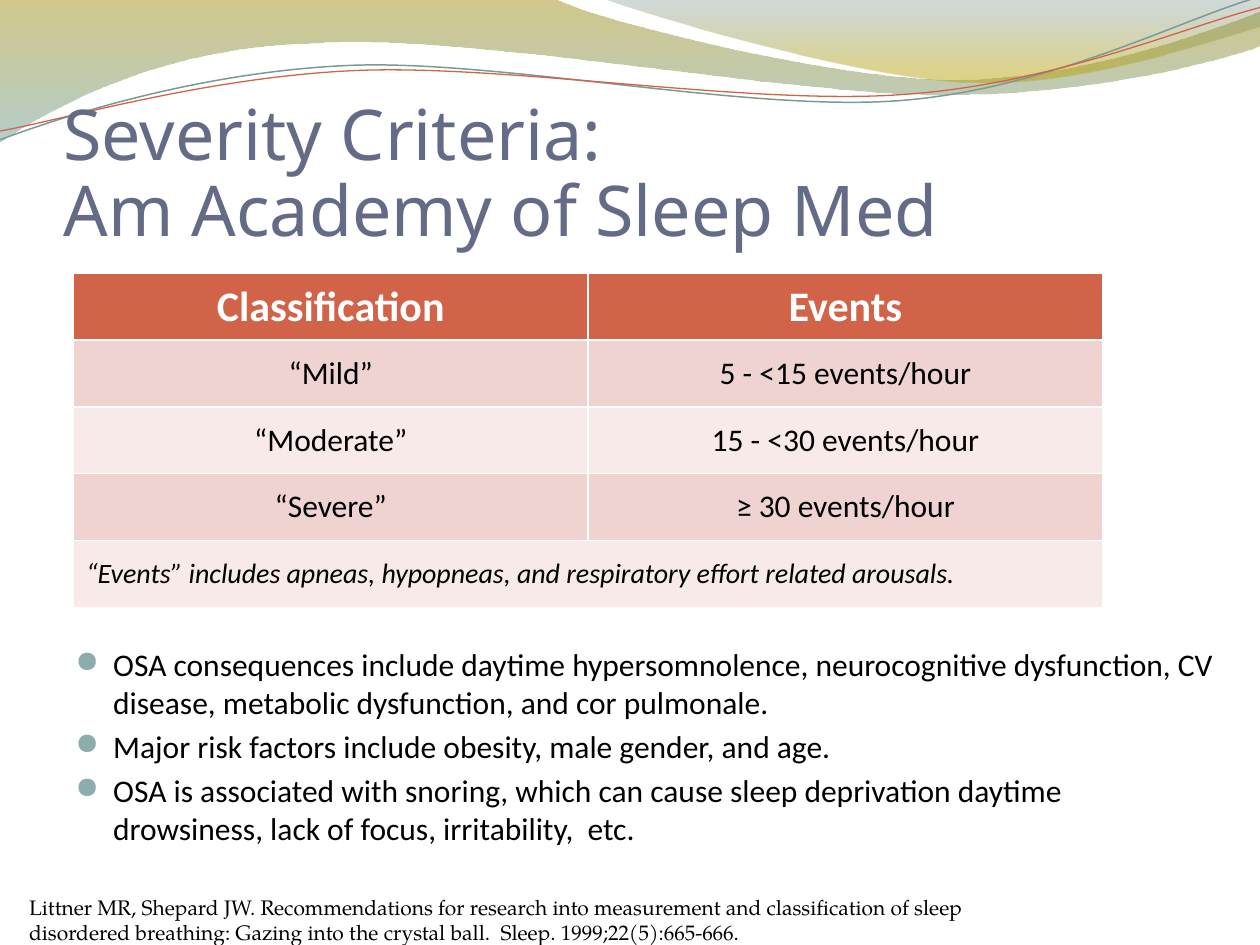
"""Build a slide of sleep apnea severity criteria."""
import dataclasses
import itertools

import lxml.etree
import pptx
import pptx.dml.color
import pptx.enum.text
import pptx.oxml.ns
import pptx.util

Align = pptx.enum.text.PP_ALIGN
Anchor = pptx.enum.text.MSO_ANCHOR
COLUMNS, ROWS = 100, 75
UNIT = pptx.util.Inches(10) // COLUMNS


@dataclasses.dataclass(frozen=True)
class Theme:
    """Colours, fonts and type sizes of the slide."""

    title: str = "646B86"
    ink: str = "000000"
    paper: str = "FFFFFF"
    accent: str = "D16349"
    bands: tuple = ("EED3D0", "F7EAE9")
    bullet: str = "8CADAE"
    thread: str = "7C999A"
    wide_wave: tuple = ((0, "978500", 45), (1, "77A5A6", 55))
    short_wave: tuple = ((0, "648484", 30), (0.8, "B49F00", 45))
    title_font: str = "Noto Sans"
    body_font: str = "Calibri"
    citation_font: str = "TeX Gyre Pagella"
    bullet_font: str = "OpenSymbol"
    title_size: int = 40
    header_size: int = 24
    body_size: int = 18
    note_size: int = 16
    citation_size: int = 12


@dataclasses.dataclass(frozen=True)
class Box:
    """A region in grid columns and rows."""

    left: float
    top: float
    width: float
    height: float

    def lengths(self):
        """Return left, top, width and height as slide lengths."""
        return [round(value * UNIT) for value in dataclasses.astuple(self)]


THEME = Theme()


def rgb(value):
    """Turn a hex string into a colour."""
    return pptx.dml.color.RGBColor.from_string(value)


def add_element(parent, tag, **attributes):
    """Append a drawing element and return it."""
    element = lxml.etree.SubElement(parent, pptx.oxml.ns.qn(tag))
    for name, value in attributes.items():
        element.set(name, str(value))
    return element


def write_text(frame, text, size=THEME.body_size, font=THEME.body_font, color=THEME.ink,
               bold=False, italic=False, align=Align.LEFT, spacing=None, before=0):
    """Write one formatted paragraph at the end of a text frame."""
    paragraph = frame.paragraphs[-1]
    if paragraph.runs:
        paragraph = frame.add_paragraph()
    paragraph.text = text
    paragraph.alignment = align
    paragraph.line_spacing = spacing
    paragraph.space_before = pptx.util.Pt(before)
    for run in paragraph.runs:
        run.font.size, run.font.name = pptx.util.Pt(size), font
        run.font.bold, run.font.italic = bold, italic
        run.font.color.rgb = rgb(color)
    return paragraph


def add_frame(slide, box):
    """Add a wrapping text box and return its text frame."""
    frame = slide.shapes.add_textbox(*box.lengths()).text_frame
    frame.word_wrap = True
    return frame


def add_title(slide, box, text):
    """Place the title on the bottom edge of its box."""
    frame = add_frame(slide, box)
    frame.vertical_anchor = Anchor.BOTTOM
    frame.margin_left = frame.margin_right = frame.margin_bottom = 0
    write_text(frame, text, size=THEME.title_size, font=THEME.title_font,
               color=THEME.title, spacing=0.9)


def bend_segments(shape, segments):
    """Turn each run of three line points into a cubic curve."""
    path_lines = iter(list(shape.element.iter(pptx.oxml.ns.qn("a:lnTo"))))
    for segment in segments:
        lines = list(itertools.islice(path_lines, len(segment)))
        if len(lines) == 3:
            curve = add_element(lines[0].getparent(), "a:cubicBezTo")
            lines[0].addprevious(curve)
            for line in lines:
                curve.append(line[0])
                line.getparent().remove(line)


def add_curve(slide, box, start, *segments, stops=None, line=None):
    """Draw a gradient wave or a thin open thread inside a box."""
    points = [(round((box.left + x) * UNIT), round((box.top + y) * UNIT))
              for x, y in itertools.chain([start], *segments)]
    builder = slide.shapes.build_freeform(*points[0])
    builder.add_line_segments(points[1:], close=bool(stops))
    shape = builder.convert_to_shape()
    bend_segments(shape, segments)
    shape.shadow.inherit = False
    if line:
        color, weight = line
        shape.fill.background()
        shape.line.color.rgb = rgb(color)
        shape.line.width = pptx.util.Pt(weight)
        return
    shape.line.fill.background()
    shape.fill.gradient()
    shape.fill.gradient_angle = 270
    for stop, (position, color, _) in zip(shape.fill.gradient_stops, stops):
        stop.position = position
        stop.color.rgb = rgb(color)
    for element, (_, _, opacity) in zip(shape.element.iter(pptx.oxml.ns.qn("a:srgbClr")), stops):
        add_element(element, "a:alpha", val=opacity * 1000)


def add_waves(slide, box):
    """Draw the two waves and two threads along the top."""
    add_curve(slide, box, (0, 0), [(44, -0.1)],
              [(47.6, 1.7), (66.4, 6.3), (75.8, 6.3)],
              [(85.3, 6.3), (95.8, 2.6), (100, 0.9)], [(100.1, 3.6)],
              [(98.3, 4.4), (87, 7.6), (74.6, 7.5)],
              [(62.2, 7.5), (38.2, 2.8), (25.7, 3.4)],
              [(12.9, 3.6), (4.6, 8.3), (-0.1, 11.3)], stops=THEME.wide_wave)
    add_curve(slide, box, (47.9, -0.1),
              [(50.9, 1.1), (68.2, 6.2), (76.9, 6.5)],
              [(85.6, 6.9), (96.1, 3.2), (100, 2.1)], [(100, 0)], stops=THEME.short_wave)
    add_curve(slide, box, (0, 11.1),
              [(4.8, 9.3), (15.8, 5.7), (27.7, 5.2)],
              [(39.5, 4.7), (59.3, 8.9), (71.3, 8)],
              [(83.3, 7.1), (93.8, 1.5), (99.8, -0.2)], line=(THEME.thread, 0.85))
    add_curve(slide, box, (0, 10.4),
              [(4.7, 9.6), (16.4, 6.1), (28.3, 5.6)],
              [(40.3, 5.1), (59.7, 8.4), (71.7, 7.5)],
              [(83.6, 6.7), (94.1, 2.1), (100, 0.6)], line=(THEME.accent, 0.75))


def add_severity_table(slide, box, header, records, note):
    """Place the table, with a note across its last row."""
    rows = [header, *records, (note,)]
    table = slide.shapes.add_table(len(rows), len(header), *box.lengths()).table
    last = len(rows) - 1
    table.cell(last, 0).merge(table.cell(last, len(header) - 1))
    formats = [dict(size=THEME.header_size, color=THEME.paper, bold=True, align=Align.CENTER),
               *[dict(align=Align.CENTER)] * len(records),
               dict(size=THEME.note_size, italic=True)]
    for index, (values, text_format) in enumerate(zip(rows, formats)):
        for cell in table.rows[index].cells:
            cell.vertical_anchor = Anchor.MIDDLE
            cell.fill.solid()
            cell.fill.fore_color.rgb = rgb(THEME.bands[(index - 1) % 2] if index else THEME.accent)
        for column, value in enumerate(values):
            write_text(table.cell(index, column).text_frame, value, **text_format)


def add_bullets(slide, box, items):
    """Place a bulleted list with hanging indents."""
    frame = add_frame(slide, box)
    for item in items:
        properties = write_text(frame, item, before=3.6)._p.get_or_add_pPr()
        properties.set("marL", str(3 * UNIT))
        properties.set("indent", str(-3 * UNIT))
        add_element(add_element(properties, "a:buClr"), "a:srgbClr", val=THEME.bullet)
        add_element(properties, "a:buSzPct", val=95000)
        add_element(properties, "a:buFont", typeface=THEME.bullet_font)
        add_element(properties, "a:buChar", char="●")


def add_citation(slide, box, text):
    """Place the source reference."""
    write_text(add_frame(slide, box), text, size=THEME.citation_size,
               font=THEME.citation_font, before=2.4)


def main():
    """Build and save the presentation."""
    presentation = pptx.Presentation()
    presentation.slide_width, presentation.slide_height = COLUMNS * UNIT, ROWS * UNIT
    slide = presentation.slides.add_slide(presentation.slide_layouts[6])
    add_waves(slide, Box(0, 0, COLUMNS, 11.3))
    add_title(slide, Box(5.04, 12.54, 90, 7.4), "Severity Criteria:\vAm Academy of Sleep Med")
    add_citation(slide, Box(1.33, 70.5, 83.7, 5),
                 "Littner MR, Shepard JW. Recommendations for research into measurement and "
                 "classification of sleep disordered breathing: Gazing into the crystal ball.  "
                 "Sleep. 1999;22(5):665-666.")
    add_severity_table(
        slide, Box(5.83, 21.7, 81.7, 26.5), ("Classification", "Events"),
        [("“Mild”", "5 - <15 events/hour"), ("“Moderate”", "15 - <30 events/hour"),
         ("“Severe”", "≥ 30 events/hour")],
        "“Events” includes apneas, hypopneas, and respiratory effort related arousals.")
    add_bullets(slide, Box(5, 50.7, 92.5, 14.1), [
        "OSA consequences include daytime hypersomnolence, neurocognitive dysfunction, "
        "CV disease, metabolic dysfunction, and cor pulmonale.",
        "Major risk factors include obesity, male gender, and age.",
        "OSA is associated with snoring, which can cause sleep deprivation daytime "
        "drowsiness, lack of focus, irritability,  etc."])
    presentation.save("out.pptx")


if __name__ == "__main__":
    main()
